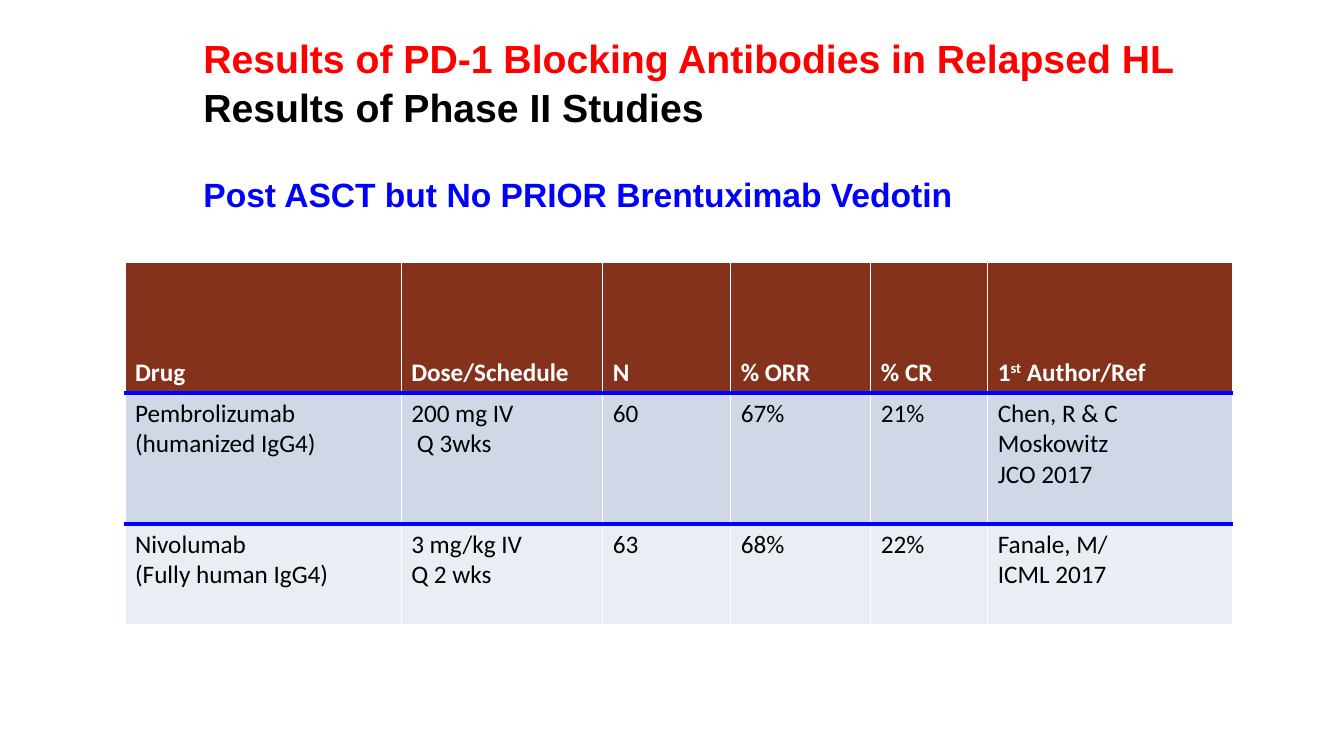
"""Build a slide with a table of PD-1 antibody results in relapsed HL."""
import lxml.etree
import pptx
import pptx.dml.color
import pptx.enum.text
import pptx.oxml.ns
import pptx.util

Pt = pptx.util.Pt

THEME = {
    "red": "FF0000", "black": "000000", "blue": "0000FF", "white": "FFFFFF",
    "header": "85321C", "bands": ["D0D8E8", "E9EDF4"],
    "title_font": "Arial", "table_font": "Calibri",
    "title_size": 28, "subtitle_size": 24, "table_size": 18,
    "grid_line": 1, "rule_line": 3,
}

TITLES = [
    ("Results of PD-1 Blocking Antibodies in Relapsed HL", "title_size", "red", 0),
    ("Results of Phase II Studies", "title_size", "black", 1.4),
    ("Post ASCT but No PRIOR Brentuximab Vedotin", "subtitle_size", "blue", 31),
]
HEADER = ["Drug", "Dose/Schedule", "N", "% ORR", "% CR", "1^st^ Author/Ref"]
STUDIES = [
    ["Pembrolizumab\n(humanized IgG4)", "200 mg IV\n Q 3wks", "60", "67%", "21%",
     "Chen, R & C Moskowitz\nJCO 2017"],
    ["Nivolumab\n(Fully human IgG4)", "3 mg/kg IV\nQ 2 wks", "63", "68%", "22%",
     "Fanale, M/\nICML 2017"],
]
TITLE_BOX = (138.2, 21, 716.4, 133.2)
TABLE_ORIGIN = (89.3, 187.2)
COLUMN_WIDTHS = [197.3, 144, 91.4, 100.1, 83.5, 175]
ROW_HEIGHTS = [93.6, 93.6, 72]


def add_run(para, text, font, size, color, bold):
    run = para.add_run()
    run.text = text
    run.font.name = font
    run.font.size = Pt(size)
    run.font.bold = bold
    run.font.color.rgb = pptx.dml.color.RGBColor.from_string(color)
    return run


def next_paragraph(frame, index):
    return frame.add_paragraph() if index else frame.paragraphs[0]


def set_borders(cell, rule_above, rule_below):
    properties = cell._tc.get_or_add_tcPr()
    rules = {"lnL": False, "lnR": False, "lnT": rule_above, "lnB": rule_below}
    for position, (side, is_rule) in enumerate(rules.items()):
        width = THEME["rule_line" if is_rule else "grid_line"]
        color = THEME["blue" if is_rule else "white"]
        line = lxml.etree.Element(pptx.oxml.ns.qn("a:" + side), w=str(Pt(width)))
        fill = lxml.etree.SubElement(line, pptx.oxml.ns.qn("a:solidFill"))
        lxml.etree.SubElement(fill, pptx.oxml.ns.qn("a:srgbClr"), val=color)
        properties.insert(position, line)


def fill_cell(cell, text, fill, color, bold):
    cell.fill.solid()
    cell.fill.fore_color.rgb = pptx.dml.color.RGBColor.from_string(fill)
    for index, line in enumerate(text.split("\n")):
        para = next_paragraph(cell.text_frame, index)
        for part, words in enumerate(line.split("^")):
            run = add_run(para, words, THEME["table_font"], THEME["table_size"], color, bold)
            if part % 2:
                run._r.get_or_add_rPr().set("baseline", "30000")


def add_titles(slide):
    box = slide.shapes.add_textbox(*map(Pt, TITLE_BOX))
    box.text_frame.word_wrap = True
    for index, (text, size, color, gap) in enumerate(TITLES):
        para = next_paragraph(box.text_frame, index)
        para.space_before = Pt(gap)
        add_run(para, text, THEME["title_font"], THEME[size], THEME[color], True)


def add_results(slide):
    rows = [HEADER] + STUDIES
    size = (sum(COLUMN_WIDTHS), sum(ROW_HEIGHTS))
    frame = slide.shapes.add_table(len(rows), len(HEADER), *map(Pt, TABLE_ORIGIN + size))
    table = frame.table
    for column, width in zip(table.columns, COLUMN_WIDTHS):
        column.width = Pt(width)
    for row, height in zip(table.rows, ROW_HEIGHTS):
        row.height = Pt(height)
    fills = [THEME["header"]] + THEME["bands"]
    for row_index, texts in enumerate(rows):
        is_header = row_index == 0
        color = THEME["white" if is_header else "black"]
        for column_index, text in enumerate(texts):
            cell = table.cell(row_index, column_index)
            fill_cell(cell, text, fills[row_index], color, is_header)
            if is_header:
                cell.vertical_anchor = pptx.enum.text.MSO_ANCHOR.BOTTOM
            set_borders(cell, row_index > 0, row_index < len(rows) - 1)


def main():
    deck = pptx.Presentation()
    deck.slide_width, deck.slide_height = Pt(960), Pt(540)
    slide = deck.slides.add_slide(deck.slide_layouts[6])
    add_titles(slide)
    add_results(slide)
    deck.save("out.pptx")


if __name__ == "__main__":
    main()
